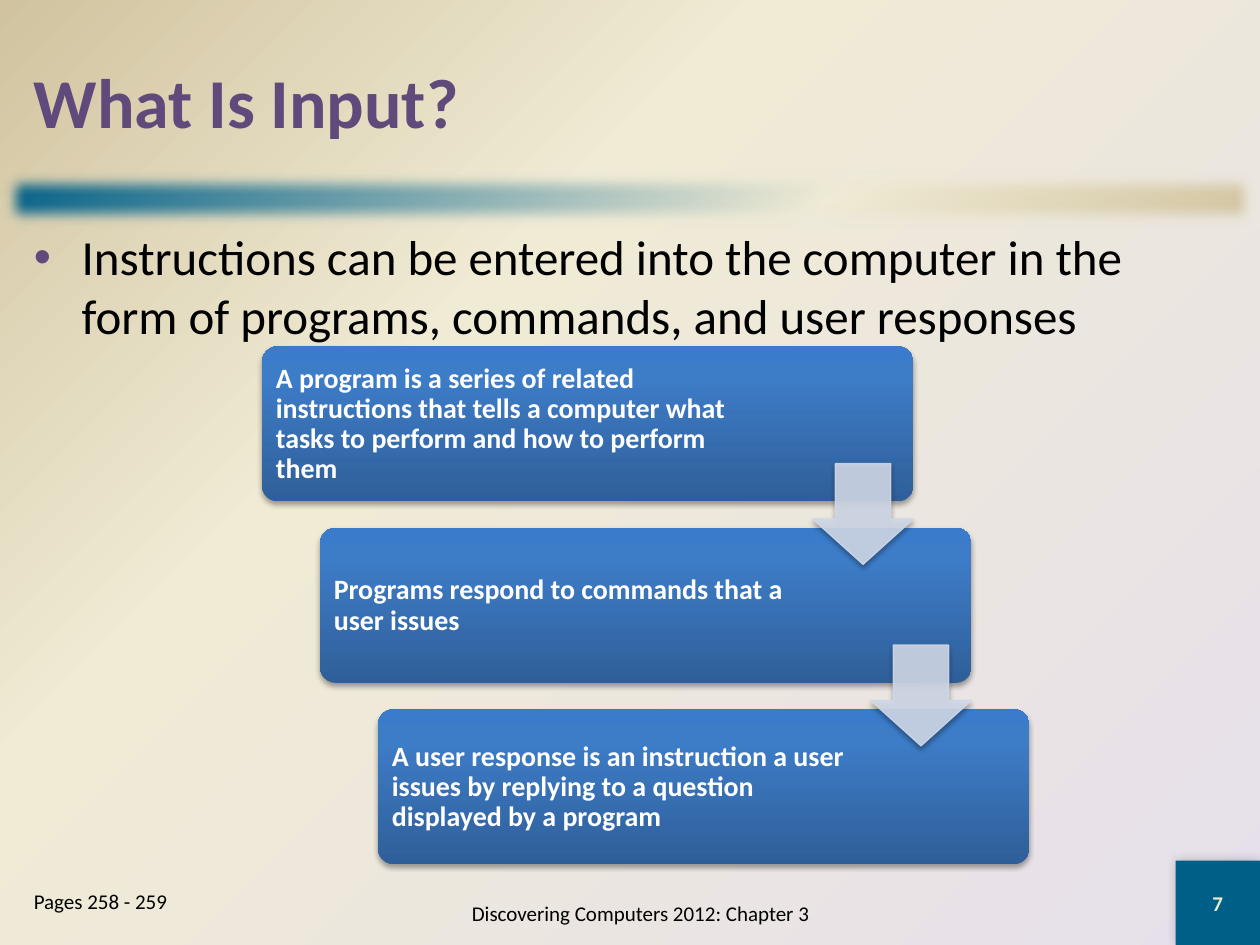
from lxml import etree
from pptx import Presentation
from pptx.dml.color import RGBColor
from pptx.enum.shapes import MSO_SHAPE
from pptx.enum.text import MSO_ANCHOR, PP_ALIGN
from pptx.oxml.ns import qn
from pptx.util import Inches, Pt

RECT = MSO_SHAPE.RECTANGLE
ROUND_RECT = MSO_SHAPE.ROUNDED_RECTANGLE
DOWN_ARROW = MSO_SHAPE.DOWN_ARROW
TOP, MIDDLE = MSO_ANCHOR.TOP, MSO_ANCHOR.MIDDLE
LEFT, CENTER = PP_ALIGN.LEFT, PP_ALIGN.CENTER

TEAL, CREAM, TAN, LILAC = "005F86", "F0EBD5", "D1C39F", "E6E0EC"
PURPLE, BLACK, WHITE = "604A7B", "000000", "FFFFFF"
PALE_BLUE, PALE_YELLOW = "D0D8E8", "EEEBCA"
BOX_STOPS = [(0, "2F5F99"), (80, "3D7CC7"), (100, "3A7CCB")]


def color(hex_code):
    return RGBColor.from_string(hex_code)


def add_xml(parent, tag, **attributes):
    child = etree.SubElement(parent, qn(tag))
    for name, value in attributes.items():
        child.set(name, str(value))
    return child


def set_gradient(parent, stops, angle=None):
    """Replace the solid fill of parent; without an angle, spread from the lower right corner."""
    gradient = etree.Element(qn("a:gradFill"), rotWithShape="1")
    stop_list = add_xml(gradient, "a:gsLst")
    for position, hex_code in stops:
        stop = add_xml(stop_list, "a:gs", pos=position * 1000)
        add_xml(stop, "a:srgbClr", val=hex_code)
    if angle is None:
        path = add_xml(gradient, "a:path", path="circle")
        add_xml(path, "a:fillToRect", l=100000, t=100000)
    else:
        add_xml(gradient, "a:lin", ang=angle * 60000, scaled=0)
    parent.replace(parent.find(qn("a:solidFill")), gradient)


class SlideBuilder:
    font = "Calibri"

    def __init__(self, slide):
        self.slide = slide

    def background(self, stops):
        self.slide.background.fill.solid()
        set_gradient(self.slide.element.find(".//" + qn("p:bgPr")), stops)

    def shape(self, kind, left, top, width, height, fill, adjustments=()):
        shape = self.slide.shapes.add_shape(
            kind, Inches(left), Inches(top), Inches(width), Inches(height))
        shape.shadow.inherit = False
        shape.fill.solid()
        shape.fill.fore_color.rgb = color(fill)
        shape.line.fill.background()
        for index, value in enumerate(adjustments):
            shape.adjustments[index] = value
        return shape

    def effect(self, shape, tag, **attributes):
        return add_xml(shape.element.spPr.find(qn("a:effectLst")), tag, **attributes)

    def shadow(self, shape, opacity=35, blur=3.1, distance=1.8, angle=90):
        shadow = self.effect(shape, "a:outerShdw", blurRad=Pt(blur), dist=Pt(distance),
                             dir=angle * 60000, rotWithShape=0)
        add_xml(add_xml(shadow, "a:srgbClr", val=BLACK), "a:alpha", val=opacity * 1000)

    def text(self, words, left, top, width, height, size, hex_code=BLACK, bold=False,
             anchor=MIDDLE, align=LEFT, inset=None, spacing=None, bullet=None):
        frame = self.slide.shapes.add_textbox(
            Inches(left), Inches(top), Inches(width), Inches(height)).text_frame
        frame.word_wrap = True
        frame.vertical_anchor = anchor
        if inset is not None:
            frame.margin_left = frame.margin_right = Inches(inset)
            frame.margin_top = frame.margin_bottom = Inches(inset)
        frame.text = words
        paragraph = frame.paragraphs[0]
        paragraph.alignment = align
        if spacing:
            paragraph.line_spacing = spacing
        if bullet:
            properties = paragraph._p.get_or_add_pPr()
            properties.set("marL", str(Inches(0.38)))
            properties.set("indent", str(-Inches(0.38)))
            add_xml(add_xml(properties, "a:buClr"), "a:srgbClr", val=bullet)
            add_xml(properties, "a:buFont", typeface="Arial")
            add_xml(properties, "a:buChar", char="•")
        font = paragraph.runs[0].font
        font.name, font.size, font.bold = self.font, Pt(size), bold
        font.color.rgb = color(hex_code)

    def step_box(self, words, left, top):
        box = self.shape(ROUND_RECT, left, top, 5.17, 1.23, TEAL, [0.1])
        set_gradient(box.element.spPr, BOX_STOPS, 270)
        self.shadow(box)
        self.text(words, left + 0.04, top + 0.04, 3.84, 1.16, 16, WHITE, bold=True,
                  inset=0.07, spacing=0.9)

    def step_arrow(self, left, top):
        arrow = self.shape(DOWN_ARROW, left, top, 0.8, 0.8, PALE_BLUE, [0.55, 0.45])
        arrow.line.color.rgb = color(PALE_BLUE)
        arrow.line.width = Pt(0.75)
        for tint in arrow.element.spPr.iter(qn("a:srgbClr")):
            add_xml(tint, "a:alpha", val=90000)
        self.shadow(arrow)


def main():
    presentation = Presentation()
    presentation.slide_width, presentation.slide_height = Inches(10), Inches(7.5)
    builder = SlideBuilder(presentation.slides.add_slide(presentation.slide_layouts[6]))

    # Background, soft divider and page number square
    builder.background([(0, LILAC), (65, CREAM), (100, TAN)])
    divider = builder.shape(RECT, 0, 1.33, 10, 0.5, TEAL)
    set_gradient(divider.element.spPr, [(0, TEAL), (65, CREAM), (100, TAN)], 45)
    builder.effect(divider, "a:softEdge", rad=112500)
    number_square = builder.shape(RECT, 9.33, 6.83, 0.67, 0.67, TEAL)
    builder.shadow(number_square, opacity=20, blur=6, distance=0, angle=225)

    # Title, footer and main statement
    builder.text("What Is Input?", 0.17, 0.17, 9.67, 1.25, 40, PURPLE, bold=True)
    builder.text("Discovering Computers 2012: Chapter 3", 3, 7, 4.17, 0.5, 12, align=CENTER)
    builder.text("7", 9.33, 6.83, 0.67, 0.67, 12, PALE_YELLOW, bold=True, align=CENTER)
    builder.text("Pages 258 - 259", 0.17, 7, 1.83, 0.5, 12, anchor=TOP)
    builder.text("Instructions can be entered into the computer in the form of programs, "
                 "commands, and user responses",
                 0.17, 1.75, 9.67, 5.08, 28, anchor=TOP, bullet=PURPLE)

    # Staircase of steps, with an arrow from each to the next
    steps = [
        "A program is a series of related instructions that tells a computer what tasks "
        "to perform and how to perform them",
        "Programs respond to commands that a user issues",
        "A user response is an instruction a user issues by replying to a question "
        "displayed by a program",
    ]
    corners = [(2.08 + 0.46 * i, 2.75 + 1.44 * i) for i in range(len(steps))]
    for words, (left, top) in zip(steps, corners):
        builder.step_box(words, left, top)
    for left, top in corners[:-1]:
        builder.step_arrow(left + 4.37, top + 0.93)

    presentation.save("out.pptx")


if __name__ == "__main__":
    main()
